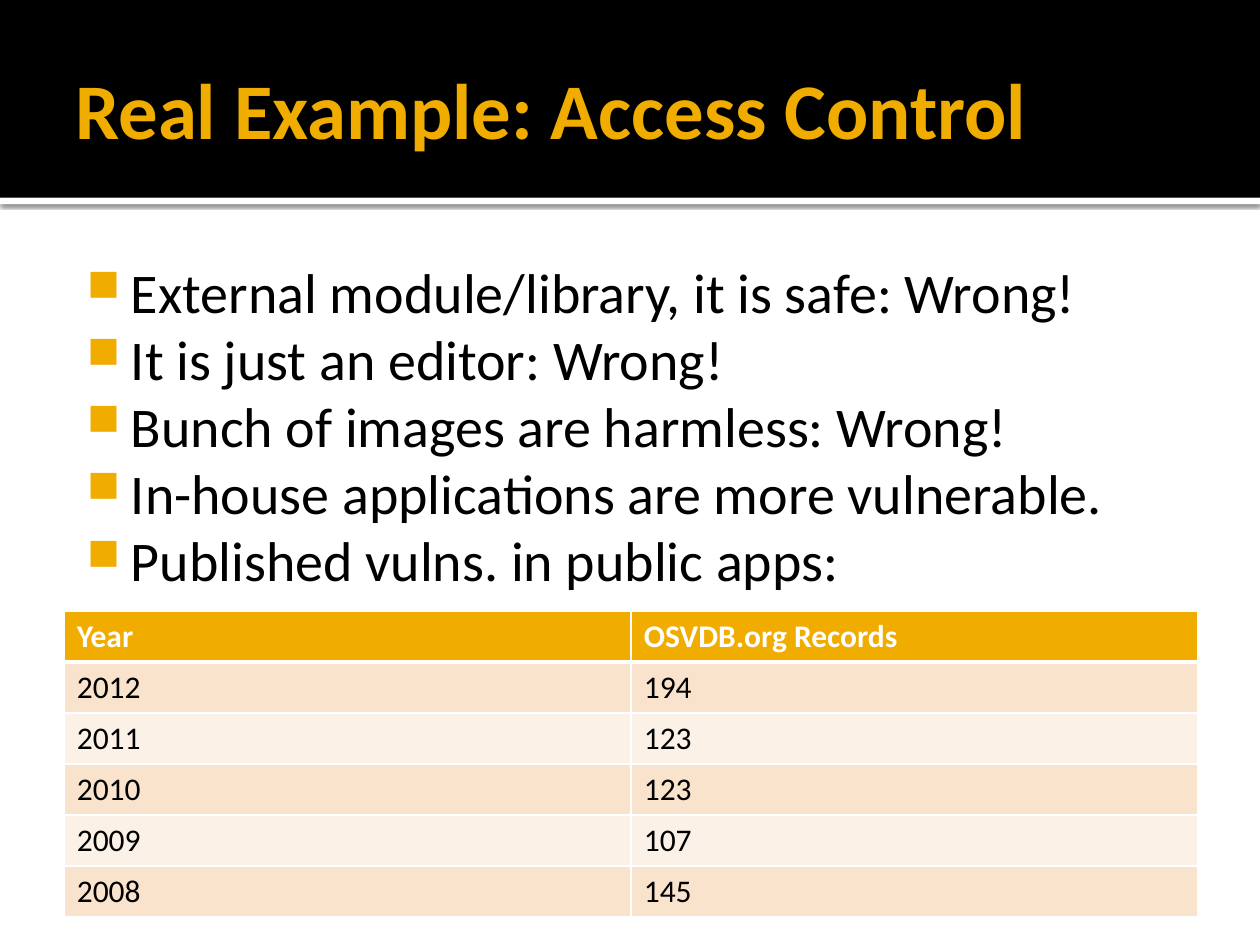
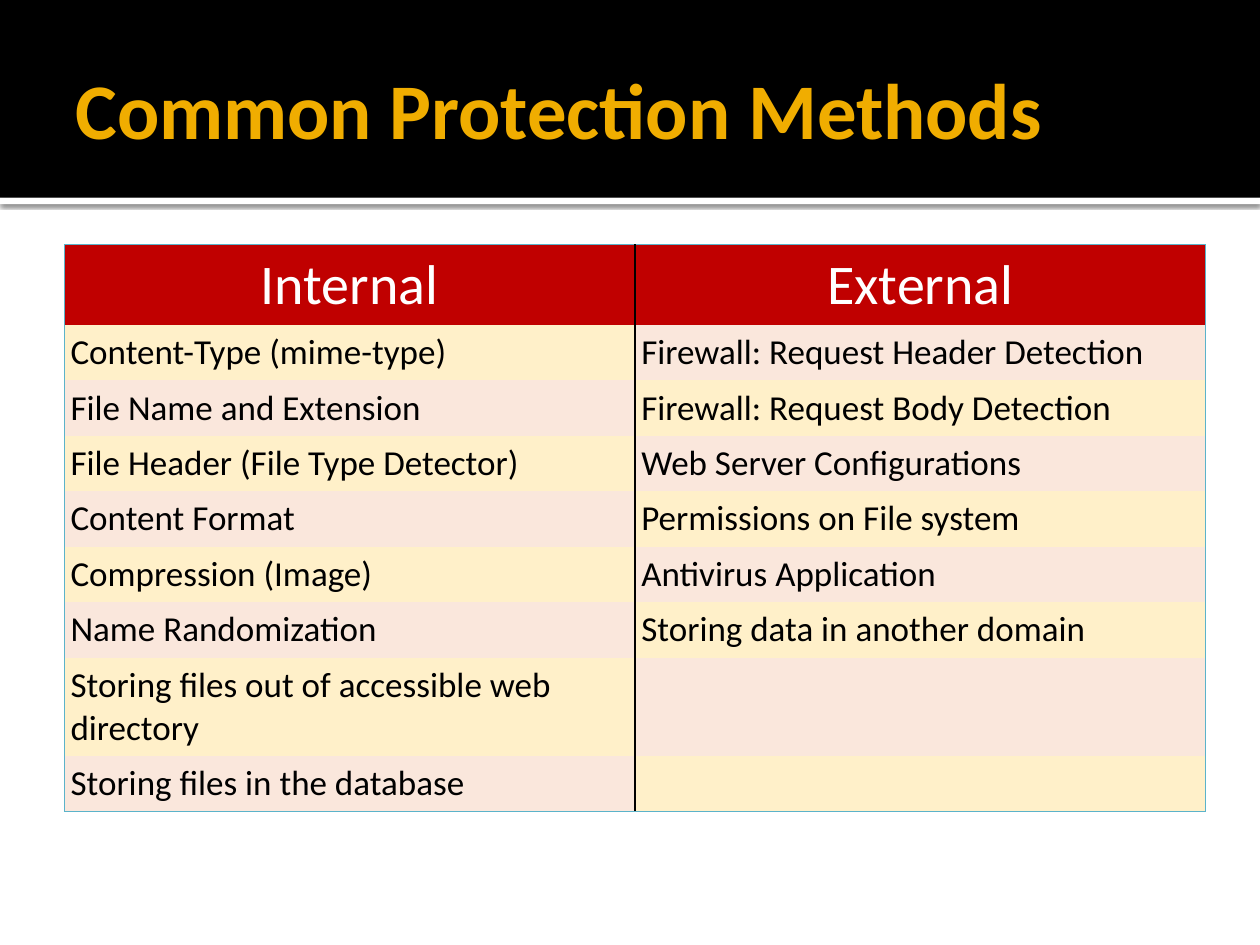
from lxml import etree
from pptx import Presentation
from pptx.dml.color import RGBColor
from pptx.enum import shapes, text
from pptx.oxml import parse_xml
from pptx.oxml.ns import nsdecls, qn
from pptx.util import Inches, Pt

# Content
TITLES = ["Real Example: Access Control", "Common Protection Methods"]
POINTS = [
    "External module/library, it is safe: Wrong!",
    "It is just an editor: Wrong!",
    "Bunch of images are harmless: Wrong!",
    "In-house applications are more vulnerable.",
    "Published vulns. in public apps:",
]
RECORDS = [
    ("Year", "OSVDB.org Records"),
    ("2012", "194"),
    ("2011", "123"),
    ("2010", "123"),
    ("2009", "107"),
    ("2008", "145"),
]
METHODS = [
    ("Internal", "External"),
    ("Content-Type (mime-type)", "Firewall: Request Header Detection"),
    ("File Name and Extension", "Firewall: Request Body Detection"),
    ("File Header (File Type Detector)", "Web Server Configurations"),
    ("Content Format", "Permissions on File system"),
    ("Compression (Image)", "Antivirus Application"),
    ("Name Randomization", "Storing data in another domain"),
    ("Storing files out of accessible web directory", ""),
    ("Storing files in the database", ""),
]

# Shared look
FONT = "Calibri"
HEX = {
    "black": "000000", "white": "FFFFFF", "gold": "F0AD00", "red": "C00000",
    "peach": "F9E3CC", "cream": "FCF1E7", "sand": "FFF0C9", "rose": "FAE7DC",
    "teal": "5BB3CA",
}


def rgb(name):
    return RGBColor.from_string(HEX[name])


def style(para, size, color, bold=False):
    font = para.font
    font.name, font.size, font.bold = FONT, Pt(size), bold
    font.color.rgb = rgb(color)


def add_band(slide, top, height, color):
    band = slide.shapes.add_shape(
        shapes.MSO_SHAPE.RECTANGLE, 0, Inches(top), Inches(10), Inches(height))
    band.shadow.inherit = False
    band.fill.solid()
    band.fill.fore_color.rgb = rgb(color)
    band.line.fill.background()
    return band


def add_box(slide, place, insets, anchor):
    frame = slide.shapes.add_textbox(*map(Inches, place)).text_frame
    frame.word_wrap = True
    frame.vertical_anchor = anchor
    (frame.margin_left, frame.margin_top,
     frame.margin_right, frame.margin_bottom) = map(Inches, insets)
    return frame


def add_base(deck, title):
    slide = deck.slides.add_slide(deck.slide_layouts[6])
    strip = add_band(slide, 1.57, 0.05, "white")
    effects = strip._element.spPr.find(qn("a:effectLst"))
    effects.append(parse_xml(
        f'<a:outerShdw {nsdecls("a")} blurRad="{Pt(2.5)}" dist="{Pt(0.8)}" '
        f'dir="5400000" algn="tl" rotWithShape="0"><a:srgbClr val="{HEX["black"]}">'
        '<a:alpha val="60000"/></a:srgbClr></a:outerShdw>'))
    add_band(slide, 0, 1.57, "black")
    frame = add_box(slide, (0.5, 0.17, 9, 1.37), (0.1, 0.05, 0.05, 0.05),
                    text.MSO_ANCHOR.MIDDLE)
    frame.text = title
    style(frame.paragraphs[0], 45, "gold", True)
    return slide


def add_points(slide, points):
    frame = add_box(slide, (0.5, 1.94, 9, 5.06), (0.06, 0.1, 0.1, 0.05),
                    text.MSO_ANCHOR.TOP)
    frame.text = "\n".join(points)
    for para in frame.paragraphs:
        props = para._p.get_or_add_pPr()
        props.set("marL", str(Inches(0.48)))
        props.set("indent", str(Inches(-0.35)))
        color = etree.SubElement(props, qn("a:buClr"))
        etree.SubElement(color, qn("a:srgbClr"), val=HEX["gold"])
        etree.SubElement(props, qn("a:buSzPct"), val="80000")
        etree.SubElement(props, qn("a:buChar"), char="■")
        style(para, 32, "black")


def set_edges(cell, edges):
    """Draw the left, right, top and bottom edges; None hides one."""
    props = cell._tc.get_or_add_tcPr()
    for side, edge in zip("LRTB", edges):
        line = etree.SubElement(props, qn(f"a:ln{side}"))
        if edge:
            color, width = edge
            line.set("w", str(Pt(width)))
            fill = etree.SubElement(line, qn("a:solidFill"))
            etree.SubElement(fill, qn("a:srgbClr"), val=HEX[color])
        else:
            etree.SubElement(line, qn("a:noFill"))


def add_grid(slide, rows, place, heights, look):
    count = len(rows)
    grid = slide.shapes.add_table(count, 2, *map(Inches, place)).table
    grid.first_row = grid.horz_banding = False
    for r, (row, height) in enumerate(zip(rows, heights)):
        grid.rows[r].height = Inches(height)
        for c, words in enumerate(row):
            cell = grid.cell(r, c)
            set_edges(cell, look["edges"](r, c, count))
            cell.fill.solid()
            cell.fill.fore_color.rgb = rgb(look["fill"](r, c))
            cell.margin_left = cell.margin_right = Inches(look["inset"])
            cell.margin_top = cell.margin_bottom = Inches(0.05)
            cell.text = words
            para = cell.text_frame.paragraphs[0]
            if r == 0:
                style(para, look["head"], "white", look["bold"])
                para.alignment = look["align"]
            else:
                style(para, look["size"], "black")


# Table looks
def record_edges(r, c, count):
    thin, thick = ("white", 1), ("white", 3)
    return thin, thin, thick if r == 1 else thin, thick if r == 0 else thin


def method_edges(r, c, count):
    rim, mid = ("teal", 0.5), ("black", 1)
    return (mid if c else rim, rim if c else mid,
            rim if r == 0 else None, rim if r == count - 1 else None)


RECORD_LOOK = {
    "head": 18, "size": 18, "bold": True, "inset": 0.1,
    "align": text.PP_ALIGN.LEFT, "edges": record_edges,
    "fill": lambda r, c: ("cream", "peach")[r % 2] if r else "gold",
}
METHOD_LOOK = {
    "head": 32, "size": 20, "bold": False, "inset": 0.05,
    "align": text.PP_ALIGN.CENTER, "edges": method_edges,
    "fill": lambda r, c: ("rose", "sand")[(r + c) % 2] if r else "red",
}


def main():
    deck = Presentation()
    deck.slide_width, deck.slide_height = Inches(10), Inches(7.5)
    first, second = [add_base(deck, title) for title in TITLES]

    # Access control: points above yearly records
    add_points(first, POINTS)
    add_grid(first, RECORDS, (0.51, 4.85, 9, 2.43),
             [2.43 / len(RECORDS)] * len(RECORDS), RECORD_LOOK)

    # Protection methods: one tall row holds two lines
    heights = [0.64] + [0.44] * 6 + [0.78, 0.44]
    add_grid(second, METHODS, (0.51, 1.94, 9.06, sum(heights)),
             heights, METHOD_LOOK)
    deck.save("out.pptx")


if __name__ == "__main__":
    main()
